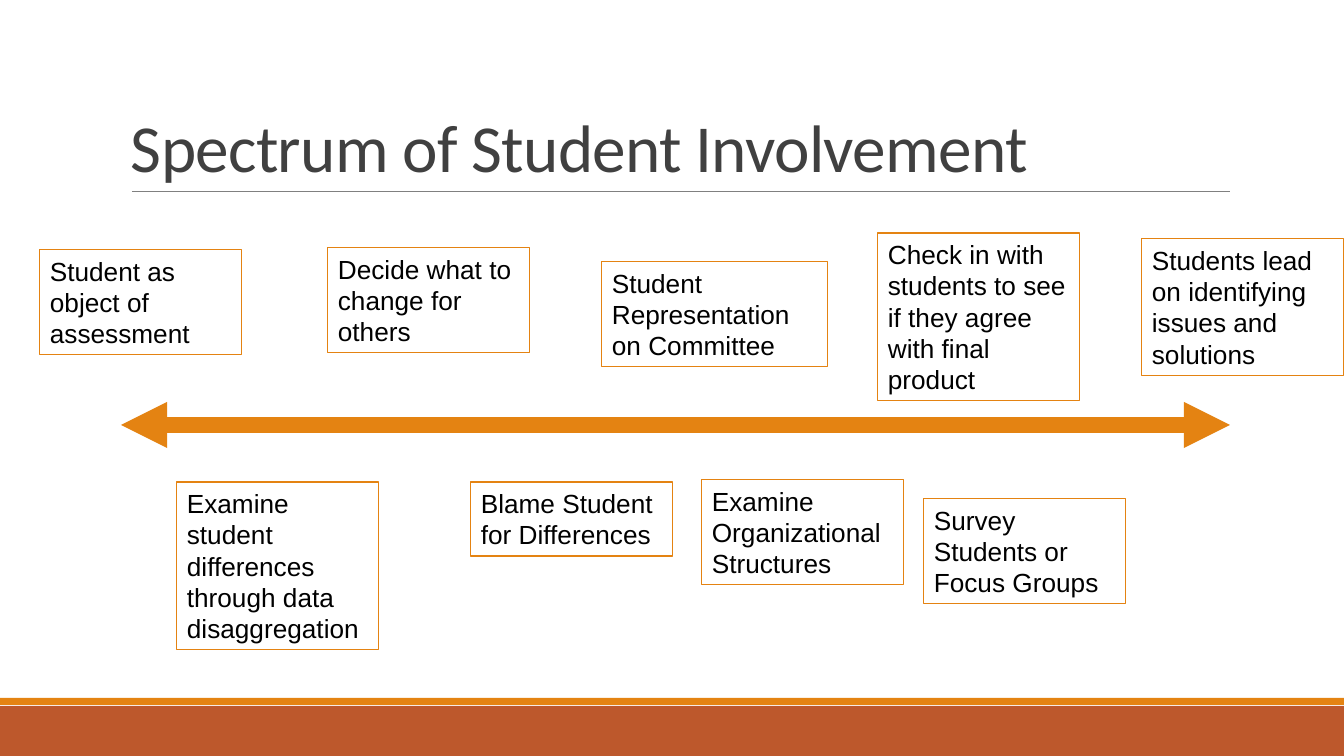
"""Build the Spectrum of Student Involvement slide."""
from lxml import etree
from pptx import Presentation
from pptx import util as u
from pptx.dml.color import RGBColor
from pptx.enum import shapes, text
from pptx.oxml.ns import qn

PX = 12192000 / 1344
COLORS = {"rust": "BD582C", "orange": "E48312", "rule": "808080",
          "title": "404040", "body": "000000"}
TITLE = {"name": "Calibri", "size": u.Pt(48)}
BODY = {"name": "Arial", "size": u.Pt(18.7)}
TITLE_FRAME = {"word_wrap": True, "vertical_anchor": text.MSO_ANCHOR.BOTTOM}
BOX_FRAME = {"word_wrap": True, "vertical_anchor": text.MSO_ANCHOR.TOP,
             "auto_size": text.MSO_AUTO_SIZE.SHAPE_TO_FIT_TEXT}
BOX_W = 202
STAGES = [
    ("Student as object of assessment", 40, 250, BOX_W, 105),
    ("Examine student differences through data disaggregation", 177, 482, BOX_W, 168),
    ("Blame Student for Differences", 471, 482, BOX_W, 74),
    ("Examine Organizational Structures", 702, 480, BOX_W, 105),
    ("Decide what to change for others", 328, 248, BOX_W, 105),
    ("Student Representation on Committee", 602, 262, 226, 105),
    ("Check in with students to see if they agree with final product", 878, 233, BOX_W, 168),
    ("Survey Students or Focus Groups", 924, 499, BOX_W, 105),
    ("Students lead on identifying issues and solutions", 1142, 239, BOX_W, 137),
]


def px(*lengths):
    """Turn pixel lengths into EMU."""
    return [u.Emu(round(n * PX)) for n in lengths]


def rgb(key):
    """Return a named colour."""
    return RGBColor.from_string(COLORS[key])


def apply(obj, values):
    """Set attributes from a dict of format values."""
    for name, value in values.items():
        setattr(obj, name, value)


def write(sp, words, color, font, frame):
    """Put one left-aligned paragraph in a shape and return it."""
    tf = sp.text_frame
    apply(tf, frame)
    p = tf.paragraphs[0]
    p.alignment = text.PP_ALIGN.LEFT
    r = p.add_run()
    r.text = words
    apply(r.font, font)
    r.font.color.rgb = rgb(color)
    return p


def add_rect(s, box):
    """Add a rectangle without a shadow."""
    sp = s.shapes.add_shape(shapes.MSO_SHAPE.RECTANGLE, *px(*box))
    sp.shadow.inherit = False
    return sp


def add_band(s, color, *box):
    """Add a filled band without an outline."""
    sp = add_rect(s, box)
    sp.fill.solid()
    sp.fill.fore_color.rgb = rgb(color)
    sp.line.fill.background()


def add_stage(s, words, *box):
    """Add an outlined box for one stage of the spectrum."""
    sp = add_rect(s, box)
    sp.fill.background()
    sp.line.color.rgb = rgb("orange")
    sp.line.width = u.Pt(0.75)
    write(sp, words, "body", BODY, BOX_FRAME)


def add_rule(s, color, width, x1, x2, y, arrows=False):
    """Add a horizontal line, with arrowheads at both ends if asked."""
    sp = s.shapes.add_connector(shapes.MSO_CONNECTOR.STRAIGHT, *px(x1, y, x2, y))
    sp.line.color.rgb = rgb(color)
    sp.line.width = u.Pt(width)
    if arrows:
        for end in ("a:headEnd", "a:tailEnd"):
            etree.SubElement(sp.line._get_or_add_ln(), qn(end), type="triangle")
    etree.SubElement(sp._element.spPr, qn("a:effectLst"))


def add_title(s, words, *box):
    """Add the slide title."""
    sp = s.shapes.add_textbox(*px(*box))
    p = write(sp, words, "title", TITLE, TITLE_FRAME)
    p.line_spacing = 0.85
    p.runs[0].font._element.set("spc", "-50")


def main():
    """Build and save the slide."""
    prs = Presentation()
    prs.slide_width, prs.slide_height = px(1344, 756)
    s = prs.slides.add_slide(prs.slide_layouts[6])
    add_band(s, "rust", 0, 706, 1344, 50)
    add_band(s, "orange", 0, 698, 1344, 7)
    add_rule(s, "rule", 0.5, 132, 1230, 191)
    add_title(s, "Spectrum of Student Involvement", 121, 31, 1109, 160)
    add_rule(s, "orange", 11, 121, 1230, 425, arrows=True)
    for stage in STAGES:
        add_stage(s, *stage)
    prs.save("out.pptx")


if __name__ == "__main__":
    main()
